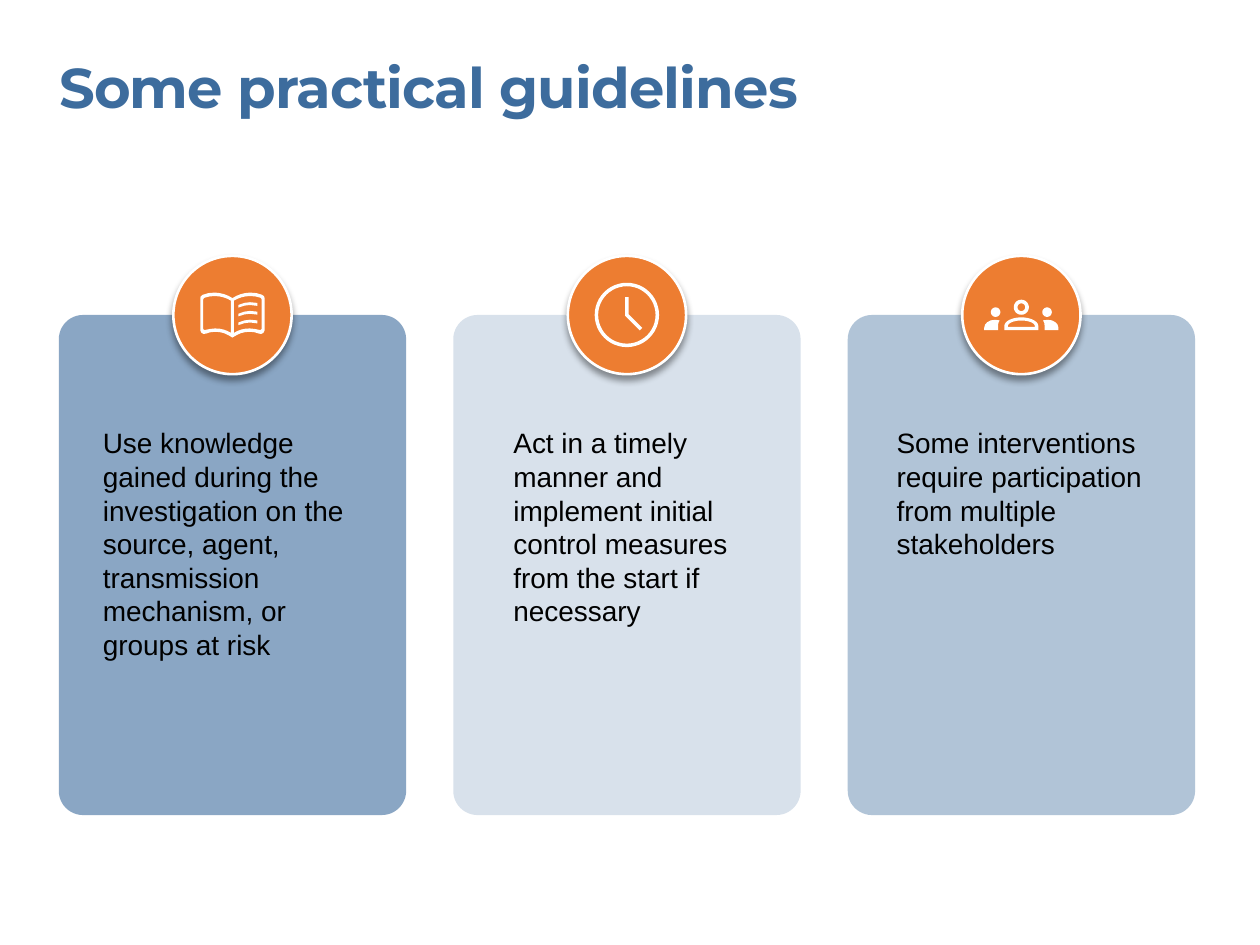
from dataclasses import dataclass
from math import cos, pi, sin

from lxml.etree import SubElement
from pptx import Presentation
from pptx.dml.color import RGBColor
from pptx.enum.shapes import MSO_SHAPE
from pptx.oxml.ns import qn
from pptx.util import Pt


@dataclass(frozen=True)
class Theme:
    blue: RGBColor = RGBColor(0x3D, 0x6C, 0x9D)
    orange: RGBColor = RGBColor(0xED, 0x7D, 0x31)
    white: RGBColor = RGBColor(0xFF, 0xFF, 0xFF)
    black: RGBColor = RGBColor(0, 0, 0)
    title_font: str = "Montserrat"
    body_font: str = "Arial"
    title_size: Pt = Pt(32)
    body_size: Pt = Pt(16)
    body_leading: Pt = Pt(19.2)


THEME = Theme()


# Outline helpers: contours are lists of points around a centre

def arc(cx, cy, rx, ry, start=0, end=360, steps=48):
    angles = [(start + (end - start) * i / steps) * pi / 180 for i in range(steps + 1)]
    return [(cx + rx * cos(a), cy + ry * sin(a)) for a in angles]


def mirror(contour):
    return [(-x, y) for x, y in contour]


def book_icon():
    cover = [(0, 12.9), (-2.2, 11.6), (-4.8, 10.4), (-7.3, 9.8), (-10, 9.6),
             (-12.8, 9.9), (-15.3, 10.7), (-16.6, 10.8), (-17.7, 10.2), (-18.4, 8.8),
             (-18.4, -9.4), (-18.1, -10.6), (-17, -11.5), (-13.7, -12.5), (-10, -12.8),
             (-7.3, -12.5), (-4.8, -11.9), (-2.2, -10.9), (0, -9.6)]
    page = [(-0.9, 10.2), (-3, 9.1), (-5.2, 8.3), (-7.5, 7.8), (-10, 7.7), (-13, 8),
            (-15.7, 8.6), (-16.4, 8.4), (-16.7, 7.9), (-16.7, -8.8), (-16.4, -9.5),
            (-15.8, -9.9), (-13, -10.6), (-10, -10.8), (-7.5, -10.6), (-5.2, -10.1),
            (-3, -9.3), (-0.9, -8.2)]
    line = [(3.4, -4.2), (3.4, -5.7), (6.8, -6.9), (10, -7.3), (14.2, -6.9),
            (14.2, -5.2), (10, -5.7), (6.8, -5.3)]
    lines = [[(x, y + step) for x, y in line] for step in (0, 5, 10)]
    return [cover + mirror(cover)[::-1], page, mirror(page), *lines]


def clock_icon():
    hands = [(-1, -10.2), (1, -10.2), (1, -0.4), (8.8, 7.4), (7.4, 8.8), (-1, 0.5)]
    return [arc(0, 0, 18.4, 18.4), arc(0, 0, 16.4, 16.4), hands]


def people_icon():
    head = arc(-14.7, -1.6, 2.7, 2.7)
    body = [(-21.2, 8.7), (-21.2, 7.3), (-20.7, 5.5), (-19.5, 4.2), (-17.5, 3.1),
            (-15, 2.8), (-12.4, 3.1), (-13.1, 4.5), (-13.3, 6.2), (-13.3, 8.7)]
    shoulders = [(-9.7, 8.7), *arc(0, 6.4, 9.7, 5, 180, 360), (9.7, 8.7)]
    chest = [(-7.7, 6.8), *arc(0, 6.4, 7.7, 3.2, 180, 360), (7.7, 6.8)]
    return [head, mirror(head), body, mirror(body), shoulders, chest,
            arc(0, -4.4, 4.3, 4.3), arc(0, -4.4, 2.2, 2.2)]


# Building blocks

def add_text(s, box, text, font, size, color, leading=None, bold=False):
    tf = s.shapes.add_textbox(*map(Pt, box)).text_frame
    tf.word_wrap = True
    tf.margin_left = tf.margin_right = tf.margin_top = tf.margin_bottom = 0
    p = tf.paragraphs[0]
    p.text = text
    p.line_spacing = leading
    p.font.name, p.font.size, p.font.bold = font, size, bold
    p.font.color.rgb = color
    return p


def add_filled(s, preset, box, color):
    sp = s.shapes.add_shape(preset, *map(Pt, box))
    sp.shadow.inherit = False
    sp.fill.solid()
    sp.fill.fore_color.rgb = color
    sp.line.fill.background()
    return sp


def set_opacity(sp, percent):
    color = sp.fill._xPr.find(qn("a:solidFill"))[0]
    SubElement(color, qn("a:alpha"), val=str(percent * 1000))


def add_drop_shadow(sp):
    effects = sp._element.spPr.find(qn("a:effectLst"))
    shadow = SubElement(effects, qn("a:outerShdw"), blurRad=str(Pt(4)), dist=str(Pt(3)),
                        dir="5400000", algn="t", rotWithShape="0")
    color = SubElement(shadow, qn("a:srgbClr"), val=str(THEME.black))
    SubElement(color, qn("a:alpha"), val="40000")


def add_icon(s, cx, cy, contours):
    placed = [[(Pt(cx + x), Pt(cy + y)) for x, y in contour] for contour in contours]
    builder = s.shapes.build_freeform(*placed[0][0])
    for i, contour in enumerate(placed):
        if i:
            builder.move_to(*contour[0])
        builder.add_line_segments(contour[1:], close=True)
    sp = builder.convert_to_shape()
    sp.shadow.inherit = False
    sp.fill.solid()
    sp.fill.fore_color.rgb = THEME.white
    sp.line.fill.background()


# Regions

def add_title(s, box, text):
    p = add_text(s, box, text, THEME.title_font, THEME.title_size, THEME.blue, bold=True)
    p.runs[0]._r.get_or_add_rPr().set("spc", "-50")


def add_card(s, box, opacity, icon, text, indent, text_width):
    left, top, width, height = box
    card = add_filled(s, MSO_SHAPE.ROUNDED_RECTANGLE, box, THEME.blue)
    card.adjustments[0] = 0.07
    set_opacity(card, opacity)

    # Badge centred on the top edge
    size, cx = 67.6, left + width / 2
    badge = add_filled(s, MSO_SHAPE.OVAL, (cx - size / 2, top - size / 2, size, size), THEME.orange)
    badge.line.color.rgb = THEME.white
    badge.line.width = Pt(1.5)
    add_drop_shadow(badge)
    add_icon(s, cx, top, icon)

    add_text(s, (left + indent, top + 63.4, text_width, 135), text,
             THEME.body_font, THEME.body_size, THEME.black, THEME.body_leading)


def main():
    prs = Presentation()
    prs.slide_width, prs.slide_height = Pt(720), Pt(540)
    s = prs.slides.add_slide(prs.slide_layouts[6])
    add_title(s, (33.8, 30.2, 615.6, 38.9), "Some practical guidelines")

    # Opacity, icon, text, text indent, text width
    cards = [
        (60, book_icon(), "Use knowledge gained during the investigation on the source, "
         "agent, transmission mechanism, or groups at risk", 25.2, 147.6),
        (20, clock_icon(), "Act in a timely manner and implement initial control measures "
         "from the start if necessary", 34.4, 140.4),
        (40, people_icon(), "Some interventions require participation from multiple "
         "stakeholders", 28, 153.4),
    ]
    width, gap = 198.5, 26.9
    for i, card in enumerate(cards):
        add_card(s, (33.6 + i * (width + gap), 180, width, 285.8), *card)
    prs.save("out.pptx")


if __name__ == "__main__":
    main()
